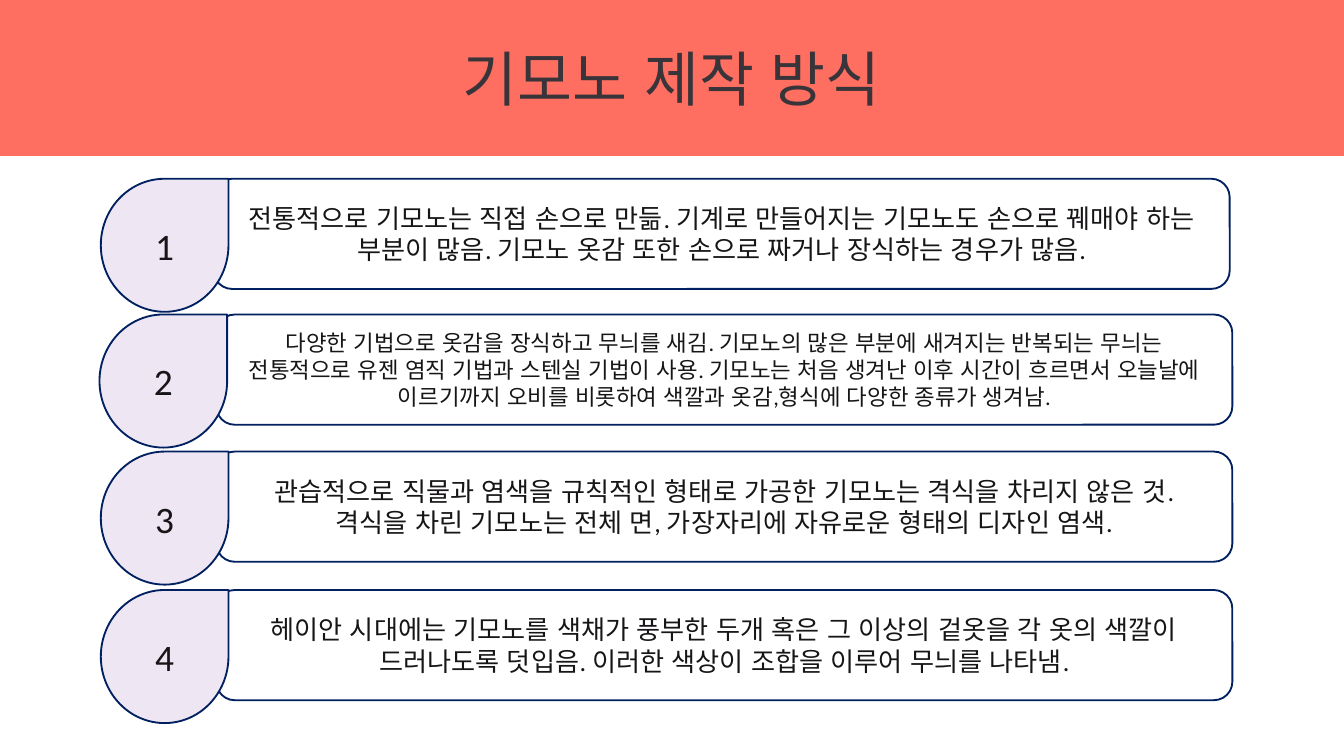
from dataclasses import dataclass

from pptx import Presentation
from pptx.dml.color import RGBColor
from pptx.enum.lang import MSO_LANGUAGE_ID
from pptx.enum.shapes import MSO_SHAPE
from pptx.enum.text import MSO_ANCHOR, MSO_AUTO_SIZE, PP_ALIGN
from pptx.oxml.ns import qn
from pptx.shapes.autoshape import Shape
from pptx.slide import Slide
from pptx.util import Inches, Pt

COLORS = {
    "banner": "FF6F61",
    "title": "393439",
    "card": "FFFFFF",
    "drop": "EFE6F4",
    "outline": "002060",
    "text": "171517",
}
KOREAN_FONT = "Noto Sans CJK KR"
BODY_FONT = "Calibri"
SLIDE_WIDTH = 10
SLIDE_HEIGHT = SLIDE_WIDTH * 9 / 16


@dataclass(frozen=True)
class Step:
    top: float
    lines: tuple[str, ...]
    size: int = 14
    card_left: float = 1.61
    drop_left: float = 0.75


STEPS = (
    Step(1.33, ("전통적으로 기모노는 직접 손으로 만듦. 기계로 만들어지는 기모노도 손으로 꿰매야 하는 "
                "부분이 많음. 기모노 옷감 또한 손으로 짜거나 장식하는 경우가 많음.",), card_left=1.59),
    Step(2.34, ("다양한 기법으로 옷감을 장식하고 무늬를 새김. 기모노의 많은 부분에 새겨지는 반복되는 무늬는 "
                "전통적으로 유젠 염직 기법과 스텐실 기법이 사용. 기모노는 처음 생겨난 이후 시간이 흐르면서 "
                "오늘날에 이르기까지 오비를 비롯하여 색깔과 옷감,형식에 다양한 종류가 생겨남.",),
         size=12, drop_left=0.74),
    Step(3.36, ("관습적으로 직물과 염색을 규칙적인 형태로 가공한 기모노는 격식을 차리지 않은 것.",
                "격식을 차린 기모노는 전체 면, 가장자리에 자유로운 형태의 디자인 염색.")),
    Step(4.39, ("헤이안 시대에는 기모노를 색채가 풍부한 두개 혹은 그 이상의 겉옷을 각 옷의 색깔이 "
                "드러나도록 덧입음. 이러한 색상이 조합을 이루어 무늬를 나타냄.",)),
)


def rgb(role: str) -> RGBColor:
    return RGBColor.from_string(COLORS[role])


def fill_shape(shape: Shape, role: str) -> None:
    shape.fill.solid()
    shape.fill.fore_color.rgb = rgb(role)


def write_centred(shape: Shape, lines: tuple[str, ...], size: int, font: str, role: str) -> None:
    frame = shape.text_frame
    frame.text = "\n".join(lines)
    frame_format = {
        "word_wrap": True,
        "auto_size": MSO_AUTO_SIZE.NONE,
        "vertical_anchor": MSO_ANCHOR.MIDDLE,
    }
    font_format = {"size": Pt(size), "name": font, "language_id": MSO_LANGUAGE_ID.KOREAN}
    for attribute, value in frame_format.items():
        setattr(frame, attribute, value)
    for paragraph in frame.paragraphs:
        paragraph.alignment = PP_ALIGN.CENTER
        for run in paragraph.runs:
            for attribute, value in font_format.items():
                setattr(run.font, attribute, value)
            run.font.color.rgb = rgb(role)


def add_outlined(slide: Slide, kind: MSO_SHAPE, box: tuple[float, ...], role: str) -> Shape:
    shape = slide.shapes.add_shape(kind, *map(Inches, box))
    shape.shadow.inherit = False
    fill_shape(shape, role)
    shape.line.color.rgb = rgb("outline")
    shape.line.width = Pt(1)
    return shape


def add_step(slide: Slide, number: int, step: Step) -> None:
    """Draw one numbered drop over the left end of its card."""
    card = add_outlined(slide, MSO_SHAPE.ROUNDED_RECTANGLE, (step.card_left, step.top, 7.56, 0.82), "card")
    write_centred(card, step.lines, step.size, BODY_FONT, "text")
    drop = add_outlined(slide, MSO_SHAPE.TEAR, (step.drop_left, step.top, 0.95, 0.99), "drop")
    write_centred(drop, (str(number),), 20, BODY_FONT, "text")


def add_banner(slide: Slide) -> None:
    banner = slide.shapes.title
    bounds = {"left": 0, "top": 0, "width": SLIDE_WIDTH, "height": 1.16}
    for attribute, value in bounds.items():
        setattr(banner, attribute, Inches(value))
    fill_shape(banner, "banner")
    write_centred(banner, ("기모노 제작 방식",), 32, KOREAN_FONT, "title")
    properties = banner.text_frame.paragraphs[0].runs[0].font._element
    east_asian = properties.makeelement(qn("a:ea"), {"typeface": KOREAN_FONT})
    properties.find(qn("a:latin")).addnext(east_asian)


def main() -> None:
    deck = Presentation()
    deck.slide_width, deck.slide_height = Inches(SLIDE_WIDTH), Inches(SLIDE_HEIGHT)
    slide = deck.slides.add_slide(deck.slide_layouts[5])
    add_banner(slide)
    for number, step in enumerate(STEPS, start=1):
        add_step(slide, number, step)
    deck.save("out.pptx")


if __name__ == "__main__":
    main()
